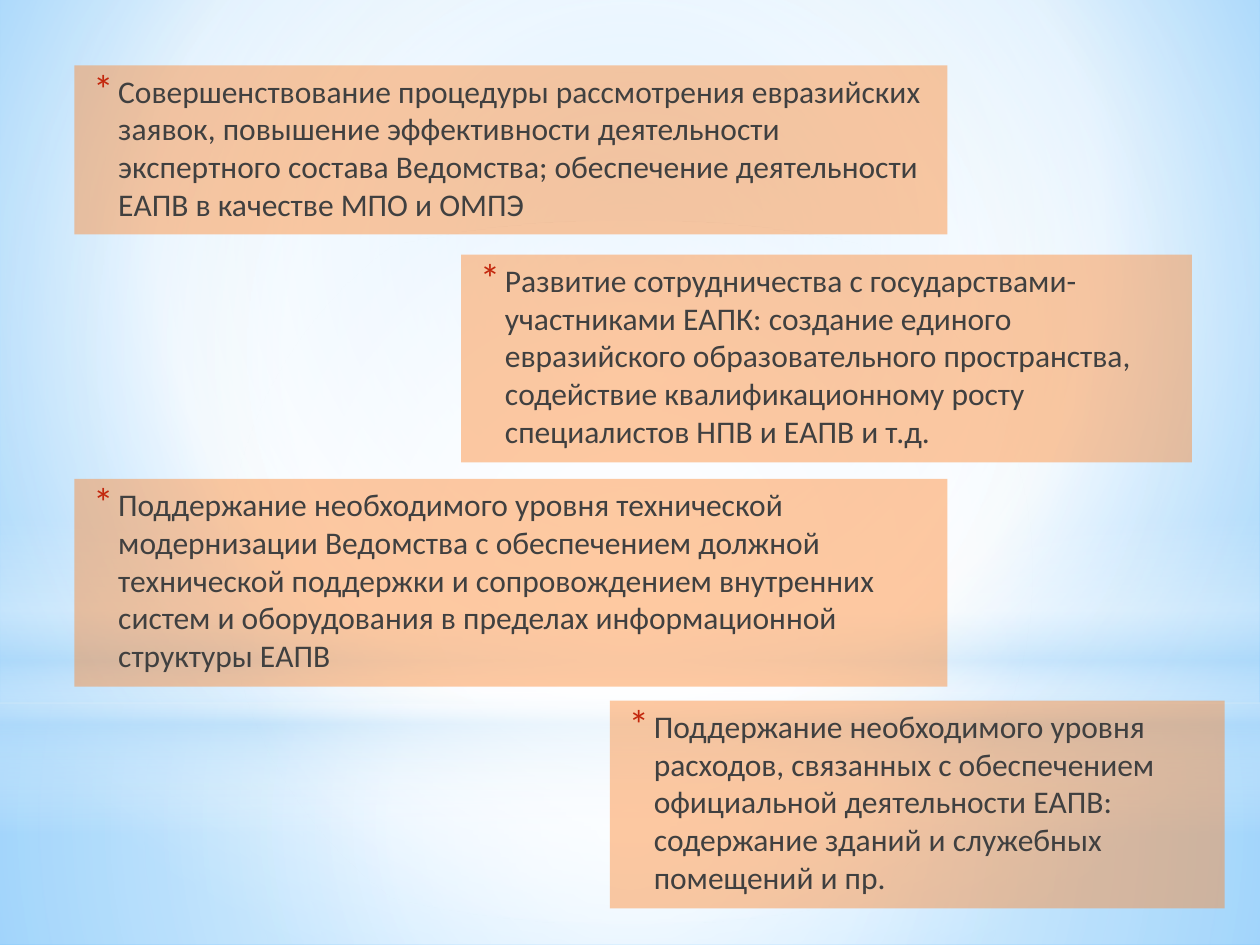
from lxml.etree import SubElement
from pptx import Presentation
from pptx.dml.color import RGBColor
from pptx.enum.shapes import MSO_SHAPE as Shape
from pptx.enum.text import MSO_ANCHOR as Anchor, PP_ALIGN as Align
from pptx.oxml.ns import qn
from pptx.util import Inches, Pt

COLORS = {
    "white": "FFFFFF", "mist": "B4DCFA", "sky": "9ED5FF", "azure": "5BB9FF",
    "orange": "FF8021", "text": "404040", "bullet": "C3260C",
}
COLUMNS, ROWS = 100, 75  # grid of 0.1 inch cells
CENTER = (50, 50, 50, 50)


def add_xml(parent, tag, **attributes):
    return SubElement(parent, qn(f"a:{tag}"),
                      {key: str(value) for key, value in attributes.items()})


def add_color(parent, name, opacity=100):
    color = add_xml(parent, "srgbClr", val=COLORS[name])
    if opacity < 100:
        add_xml(color, "alpha", val=opacity * 1000)


def set_gradient(properties, stops, focus=None, angle=0):
    """Swap the solid fill for a gradient, circular when it has a focus."""
    solid = properties.find(qn("a:solidFill"))
    gradient = add_xml(properties, "gradFill", rotWithShape=1)
    properties.replace(solid, gradient)
    stop_list = add_xml(gradient, "gsLst")
    for position, name, opacity in stops:
        add_color(add_xml(stop_list, "gs", pos=position * 1000), name, opacity)
    if focus:
        path = add_xml(gradient, "path", path="circle")
        add_xml(path, "fillToRect",
                **{side: share * 1000 for side, share in zip("ltrb", focus)})
    else:
        add_xml(gradient, "lin", ang=angle * 60000, scaled=0)


def write_text(frame, text, font="Calibri", size=18, color="text",
               bullet="*", bullet_size=130, indent=0.25, hanging=0.2, after=3):
    frame.word_wrap = True
    frame.vertical_anchor = Anchor.TOP
    paragraph = frame.paragraphs[0]
    paragraph.alignment = Align.LEFT
    paragraph.space_before = Pt(0)
    paragraph.space_after = Pt(after)
    layout = paragraph._p.get_or_add_pPr()
    layout.set("marL", str(Inches(indent)))
    layout.set("indent", str(-Inches(hanging)))
    add_color(add_xml(layout, "buClr"), "bullet")
    add_xml(layout, "buSzPct", val=bullet_size * 1000)
    add_xml(layout, "buFont", typeface=font)
    add_xml(layout, "buChar", char=bullet)
    run = paragraph.add_run()
    run.text = text
    run.font.name = font
    run.font.size = Pt(size)
    run.font.color.rgb = RGBColor.from_string(COLORS[color])


class Page:
    def __init__(self, deck):
        self.cell_width = deck.slide_width / COLUMNS
        self.cell_height = deck.slide_height / ROWS
        self.slide = deck.slides.add_slide(deck.slide_layouts[6])

    def background(self, stops, focus):
        self.slide.background.fill.solid()
        properties = self.slide._element.find(".//" + qn("p:bgPr"))
        set_gradient(properties, stops, focus)

    def panel(self, kind, column, row, width, height, color="white"):
        shape = self.slide.shapes.add_shape(
            kind, round(column * self.cell_width), round(row * self.cell_height),
            round(width * self.cell_width), round(height * self.cell_height))
        shape.shadow.inherit = False
        shape.line.fill.background()
        shape.fill.solid()
        shape.fill.fore_color.rgb = RGBColor.from_string(COLORS[color])
        return shape

    def glow(self, kind, row, height, stops, **direction):
        shape = self.panel(kind, 0, row, COLUMNS, height)
        set_gradient(shape._element.spPr, stops, **direction)

    def goal(self, column, row, width, height, text):
        shape = self.panel(Shape.RECTANGLE, column, row, width, height, "orange")
        color = shape._element.spPr.find(qn("a:solidFill"))[0]
        add_xml(color, "alpha", val=42000)
        write_text(shape.text_frame, text)


def main():
    deck = Presentation()
    deck.slide_width, deck.slide_height = Inches(10), Inches(7.5)
    page = Page(deck)

    # Sky backdrop: a horizon splits it, with a haze band and a bright oval
    horizon = 55.8
    page.background([(0, "sky", 100), (60, "white", 100), (100, "azure", 100)],
                    focus=(20, 10, 20, 60))
    page.glow(Shape.RECTANGLE, horizon, ROWS - horizon,
              [(0, "white", 91), (37, "white", 76), (100, "mist", 79)], focus=CENTER)
    page.glow(Shape.RECTANGLE, 0, horizon,
              [(0, "white", 89), (48, "white", 62), (100, "mist", 79)], focus=CENTER)
    page.glow(Shape.RECTANGLE, 41.2, 25,
              [(0, "white", 0), (29, "white", 30), (45, "mist", 40),
               (55, "white", 26), (65, "mist", 60), (100, "white", 0)], angle=90)
    page.glow(Shape.OVAL, 17.5, horizon,
              [(0, "white", 100), (56, "white", 0)], focus=CENTER)

    # Goals, staggered left and right
    left, wide = 5.9, 69.3
    four_lines, five_lines = 13.4, 16.5
    goals = [
        (left, 5.2, wide, four_lines,
         "Совершенствование процедуры рассмотрения евразийских заявок, повышение "
         "эффективности деятельности экспертного состава Ведомства; обеспечение "
         "деятельности ЕАПВ в качестве МПО и ОМПЭ"),
        (36.6, 20.2, 58, five_lines,
         "Развитие сотрудничества с государствами-участниками ЕАПК: создание единого "
         "евразийского образовательного пространства, содействие квалификационному "
         "росту специалистов НПВ и ЕАПВ и т.д."),
        (left, 38, wide, five_lines,
         "Поддержание необходимого уровня технической модернизации Ведомства с "
         "обеспечением должной технической поддержки и сопровождением внутренних "
         "систем и оборудования в пределах информационной структуры ЕАПВ"),
        (48.4, 55.6, 48.8, five_lines,
         "Поддержание необходимого уровня расходов, связанных с обеспечением "
         "официальной деятельности ЕАПВ: содержание зданий и служебных помещений и пр."),
    ]
    for goal in goals:
        page.goal(*goal)

    deck.save("out.pptx")


if __name__ == "__main__":
    main()
